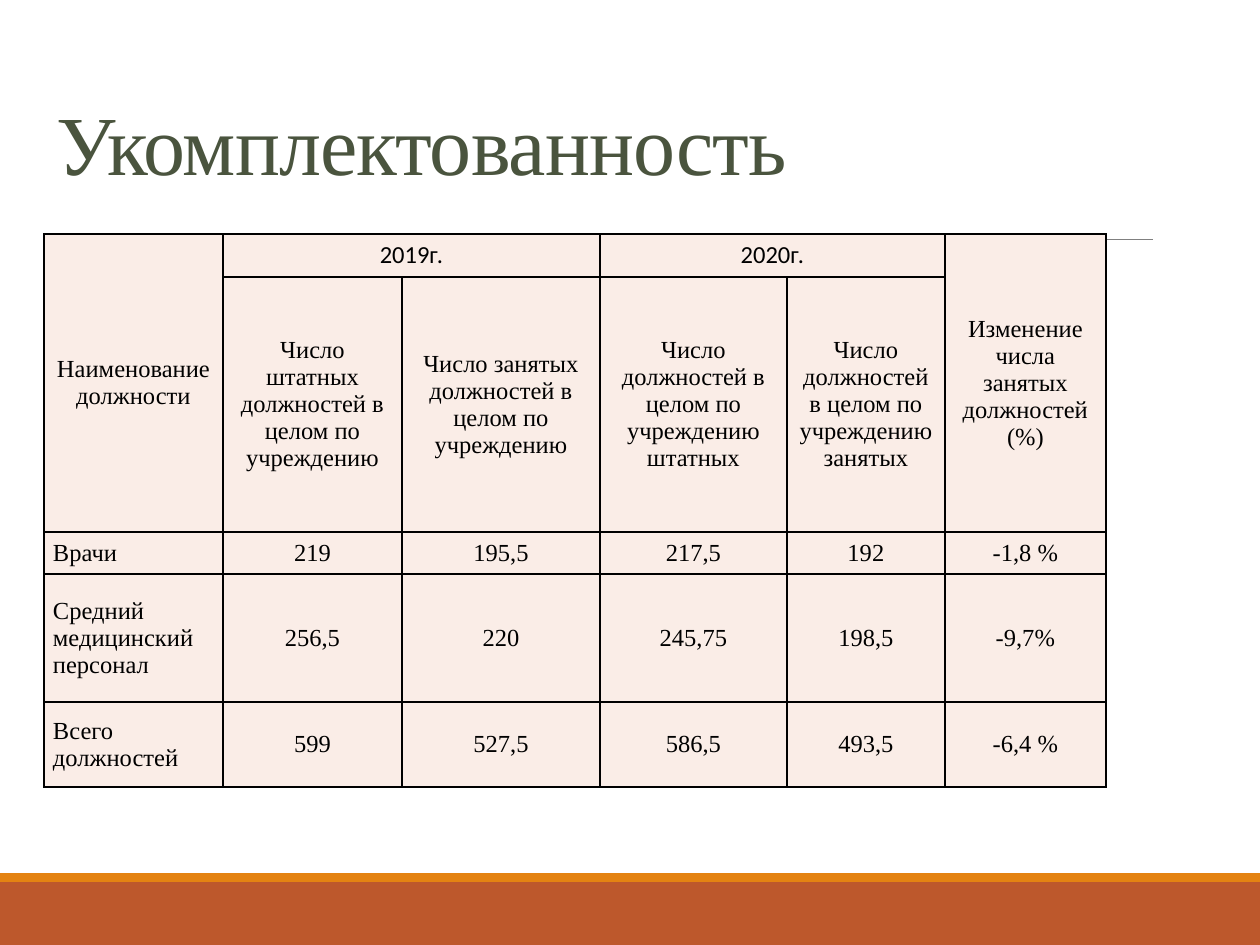
from lxml.etree import SubElement
from pptx import Presentation
from pptx.dml.color import RGBColor
from pptx.enum.shapes import MSO_CONNECTOR, MSO_SHAPE
from pptx.enum.text import MSO_ANCHOR, MSO_AUTO_SIZE, PP_ALIGN
from pptx.oxml.ns import qn
from pptx.util import Emu, Pt

RUST = RGBColor(0xBD, 0x58, 0x2C)
ORANGE = RGBColor(0xE4, 0x83, 0x12)
GRAY = RGBColor(0x80, 0x80, 0x80)
OLIVE = RGBColor(0x4A, 0x54, 0x3E)
BLACK = RGBColor(0, 0, 0)
BLUSH = RGBColor(0xFA, 0xED, 0xE7)
SERIF, SANS = "Times New Roman", "Calibri"

COLS = [179, 179, 198, 187, 158, 161]
ROWS = [43, 255, 42, 128, 85]
CELLS = [
    ["Наименование должности", "2019г.", None, "2020г.", None,
     "Изменение числа занятых должностей\n(%)"],
    [None, "Число штатных должностей в целом по учреждению",
     "Число занятых должностей в целом по учреждению",
     "Число должностей в целом по учреждению штатных",
     "Число должностей в целом по учреждению занятых", None],
    ["Врачи", "219", "195,5", "217,5", "192", "-1,8 %"],
    ["Средний медицинский персонал", "256,5", "220", "245,75", "198,5", "-9,7%"],
    ["Всего должностей", "599", "527,5", "586,5", "493,5", "-6,4 %"],
]
MERGES = [((0, 0), (1, 0)), ((0, 1), (0, 2)), ((0, 3), (0, 4)), ((0, 5), (1, 5))]


def px(n):
    """Turn pixels at 126 to the inch into EMU."""
    return Emu(round(n * 914400 / 126))


def add_run(p, text, font, size, color):
    """Add one formatted run to a paragraph."""
    r = p.add_run()
    r.text = text
    r.font.name, r.font.size = font, Pt(size)
    r.font.color.rgb = color
    return r


def add_band(s, x, y, w, h, color):
    """Add a plain filled strip."""
    sp = s.shapes.add_shape(MSO_SHAPE.RECTANGLE, px(x), px(y), px(w), px(h))
    sp.shadow.inherit = False
    sp.fill.solid()
    sp.fill.fore_color.rgb = color
    sp.line.fill.background()


def add_footer(s, x, y, w, h):
    """Add the two-tone footer inside its box."""
    stripe = 9
    add_band(s, x, y + stripe, w, h - stripe, RUST)
    add_band(s, x, y, w, stripe, ORANGE)


def add_rule(s, x, y, w):
    """Add the thin horizontal rule under the title."""
    line = s.shapes.add_connector(MSO_CONNECTOR.STRAIGHT, px(x), px(y), px(x + w), px(y))
    line.line.color.rgb = GRAY
    line.line.width = Pt(0.5)
    SubElement(line._element.spPr, qn("a:effectLst"))


def set_title(s, x, y, w, h):
    """Place and format the title placeholder."""
    sp = s.shapes.title
    sp.left, sp.top, sp.width, sp.height = px(x), px(y), px(w), px(h)
    tf = sp.text_frame
    tf.word_wrap = True
    tf.auto_size = MSO_AUTO_SIZE.NONE
    tf.vertical_anchor = MSO_ANCHOR.BOTTOM
    p = tf.paragraphs[0]
    p.alignment = PP_ALIGN.LEFT
    p.line_spacing = 0.85
    r = add_run(p, "Укомплектованность", SERIF, 48, OLIVE)
    r.font._element.set("spc", "-50")


def set_borders(cell):
    """Draw a thin black border on all four sides of a cell."""
    tcPr = cell._tc.get_or_add_tcPr()
    for i, side in enumerate(("a:lnL", "a:lnR", "a:lnT", "a:lnB")):
        ln = tcPr.makeelement(qn(side), {"w": str(Pt(1))})
        fill = SubElement(ln, qn("a:solidFill"))
        SubElement(fill, qn("a:srgbClr"), val=str(BLACK))
        tcPr.insert(i, ln)


def fill_cell(cell, text, font, align):
    """Format a cell and write its paragraphs."""
    cell.fill.solid()
    cell.fill.fore_color.rgb = BLUSH
    set_borders(cell)
    cell.margin_left = cell.margin_right = px(9)
    cell.margin_top = cell.margin_bottom = 0
    cell.vertical_anchor = MSO_ANCHOR.MIDDLE
    tf = cell.text_frame
    for i, line in enumerate((text or "").split("\n")):
        p = tf.add_paragraph() if i else tf.paragraphs[0]
        p.alignment = align
        if line:
            add_run(p, line, font, 14, BLACK)


def add_staff_table(s, x, y):
    """Add the staffing table with its two-level header."""
    frame = s.shapes.add_table(len(ROWS), len(COLS), px(x), px(y),
                               px(sum(COLS)), px(sum(ROWS)))
    table = frame.table
    for col, w in zip(table.columns, COLS):
        col.width = px(w)
    for row, h in zip(table.rows, ROWS):
        row.height = px(h)
    for start, end in MERGES:
        table.cell(*start).merge(table.cell(*end))
    for i, row in enumerate(CELLS):
        for j, text in enumerate(row):
            font = SANS if i == 0 and 0 < j < 5 else SERIF
            align = PP_ALIGN.JUSTIFY if i > 1 and j == 0 else PP_ALIGN.CENTER
            fill_cell(table.cell(i, j), text, font, align)


def main():
    """Build the slide and save it."""
    prs = Presentation()
    prs.slide_width, prs.slide_height = px(1260), px(945)
    s = prs.slides.add_slide(prs.slide_layouts[5])
    add_footer(s, 0, 873, 1260, 72)
    add_rule(s, 123, 239, 1030)
    set_title(s, 44, 55, 1040, 144)
    add_staff_table(s, 44, 234)
    prs.save("out.pptx")


if __name__ == "__main__":
    main()
